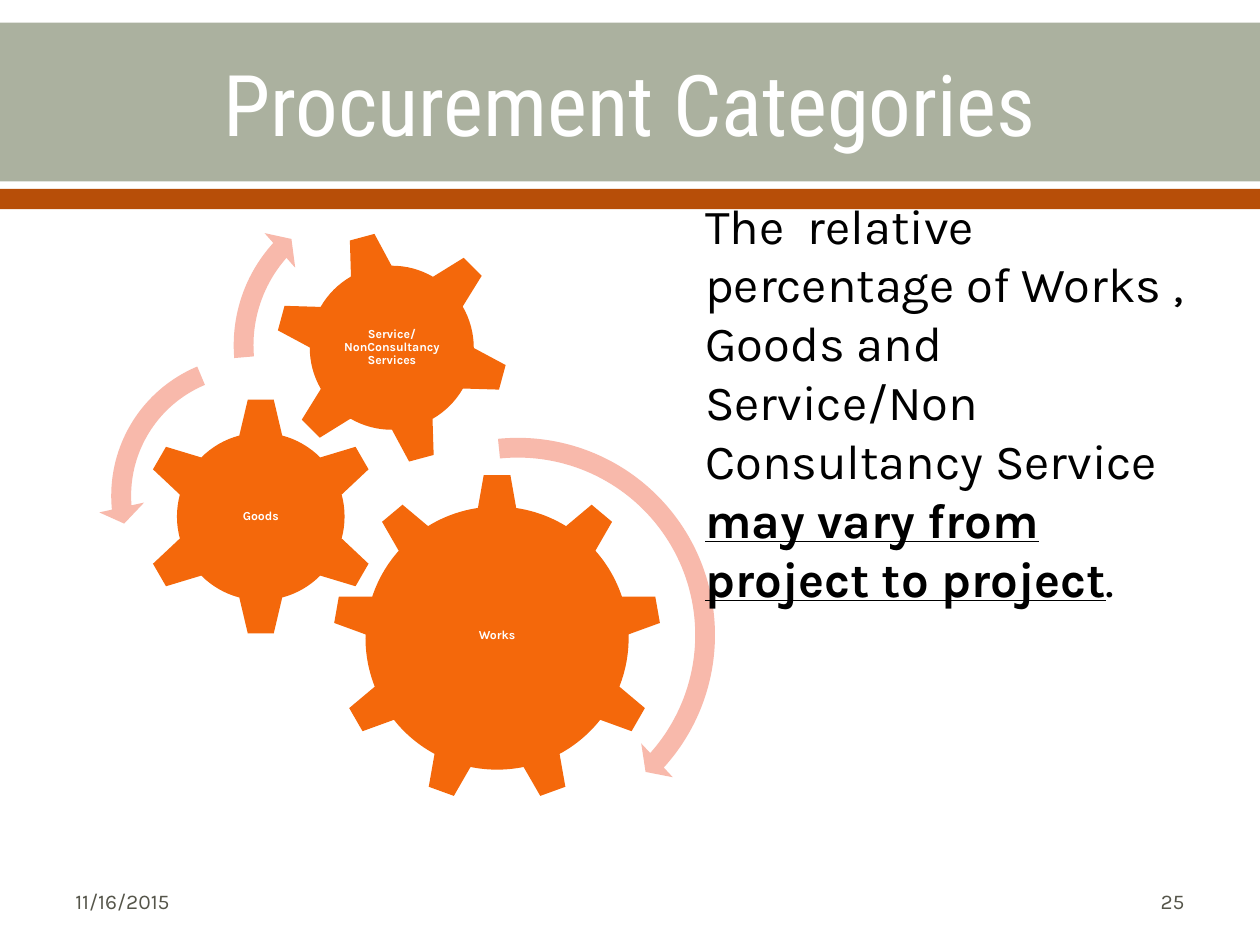
from pptx import Presentation
from pptx.dml.color import RGBColor
from pptx.enum.shapes import MSO_SHAPE as Shape
from pptx.enum.text import MSO_ANCHOR as Anchor, PP_ALIGN as Align
from pptx.util import Inches, Pt

BODY, HEAD = "Karla", "Roboto Condensed"
WHITE, GREY = "FFFFFF", "55554A"
SAGE, RUST, ORANGE, PINK = "ABB19F", "B74E08", "F4680B", "F8B9AB"


def color(code):
    return RGBColor.from_string(code)


def draw(slide, kind, box, fill):
    shape = slide.shapes.add_shape(kind, *map(Inches, box))
    shape.shadow.inherit = False
    shape.fill.solid()
    shape.fill.fore_color.rgb = color(fill)
    shape.line.fill.background()
    return shape


def write(slide, box, runs, size, ink, font=BODY, align=Align.LEFT,
          anchor=Anchor.MIDDLE, inset=None, spacing=None):
    """Place one paragraph of (text, bold, underline) runs."""
    frame = slide.shapes.add_textbox(*map(Inches, box)).text_frame
    frame.word_wrap = True
    frame.vertical_anchor = anchor
    if inset is not None:
        frame.margin_left = frame.margin_right = Inches(inset)
        frame.margin_top = frame.margin_bottom = Inches(inset)
    para = frame.paragraphs[0]
    para.alignment = align
    if spacing:
        para.line_spacing = spacing
    for text, bold, under in runs:
        run = para.add_run()
        run.text = text
        run.font.name = font
        run.font.size = Pt(size)
        run.font.bold = bold
        run.font.underline = under
        run.font.color.rgb = color(ink)


def banner(slide, left, top, width):
    draw(slide, Shape.RECTANGLE, (left, top, width, 1.26), SAGE)
    draw(slide, Shape.RECTANGLE, (left, top + 1.32, width, 0.16), RUST)
    write(slide, (left + 0.5, top + 0.02, width - 1, 1.22),
          [("Procurement Categories", False, False)], 48.6, WHITE, HEAD, Align.CENTER)


def gear(slide, kind, left, top, size, label, inner, drop=0, turn=0):
    """Draw a gear with a label box of size inner, moved down by drop."""
    draw(slide, kind, (left, top, size, size), ORANGE).rotation = turn
    wide, high = inner
    box = (left + (size - wide) / 2, top + (size - high) / 2 + drop, wide, high)
    write(slide, box, [(label, True, False)], 7, WHITE,
          align=Align.CENTER, inset=0.01, spacing=0.9)


def arc(slide, kind, left, top, size, band, head, angles):
    """Draw a curved arrow; band and head are percent, angles are degrees."""
    shape = draw(slide, kind, (left, top, size, size), PINK)
    values = [band / 100, *(angle * 0.6 for angle in angles), head / 100]
    for i, value in enumerate(values):
        shape.adjustments[i] = value


def gears(slide, left, top):
    gear(slide, Shape.GEAR_9, left + 1.86, top + 2.33, 2.61, "Works", (1.56, 1.34), -0.02)
    gear(slide, Shape.GEAR_6, left + 0.34, top + 1.72, 1.9, "Goods", (0.94, 0.94))
    gear(slide, Shape.GEAR_6, left + 1.4, top + 0.4, 1.86,
         "Service/NonConsultancy Services", (1.04, 1.04), turn=345)
    arc(slide, Shape.CIRCULAR_ARROW, left + 1.66, top + 1.94, 3.34,
        4.7, 5.5, (4.98, 42, 264.23))
    arc(slide, Shape.LEFT_CIRCULAR_ARROW, left, top + 1.29, 2.43,
        6.5, 7.5, (7.17, 174.82, 247.3))
    arc(slide, Shape.CIRCULAR_ARROW, left + 0.97, top, 2.62,
        6, 7, (6.57, 221.9, 175.14))


def note(slide, box):
    runs = [
        ("The  relative percentage of Works , Goods and "
         "Service/Non Consultancy Service ", False, False),
        ("may vary from project to project", True, True),
        (".", False, False),
    ]
    write(slide, box, runs, 28, "000000", anchor=Anchor.TOP)


def footer(slide, left, top, width):
    wide = 2.33
    for x, text, align in ((left, "11/16/2015", Align.LEFT),
                           (left + width - wide, "25", Align.RIGHT)):
        write(slide, (x, top, wide, 0.4), [(text, False, False)], 12, GREY, align=align)


def main():
    deck = Presentation()
    deck.slide_width, deck.slide_height = Inches(10), Inches(7.5)
    slide = deck.slides.add_slide(deck.slide_layouts[6])
    banner(slide, 0, 0.18, 10)
    gears(slide, 0.78, 1.43)
    note(slide, (5.5, 1.5, 4.17, 2.46))
    footer(slide, 0.5, 6.95, 9)
    deck.save("out.pptx")


if __name__ == "__main__":
    main()
